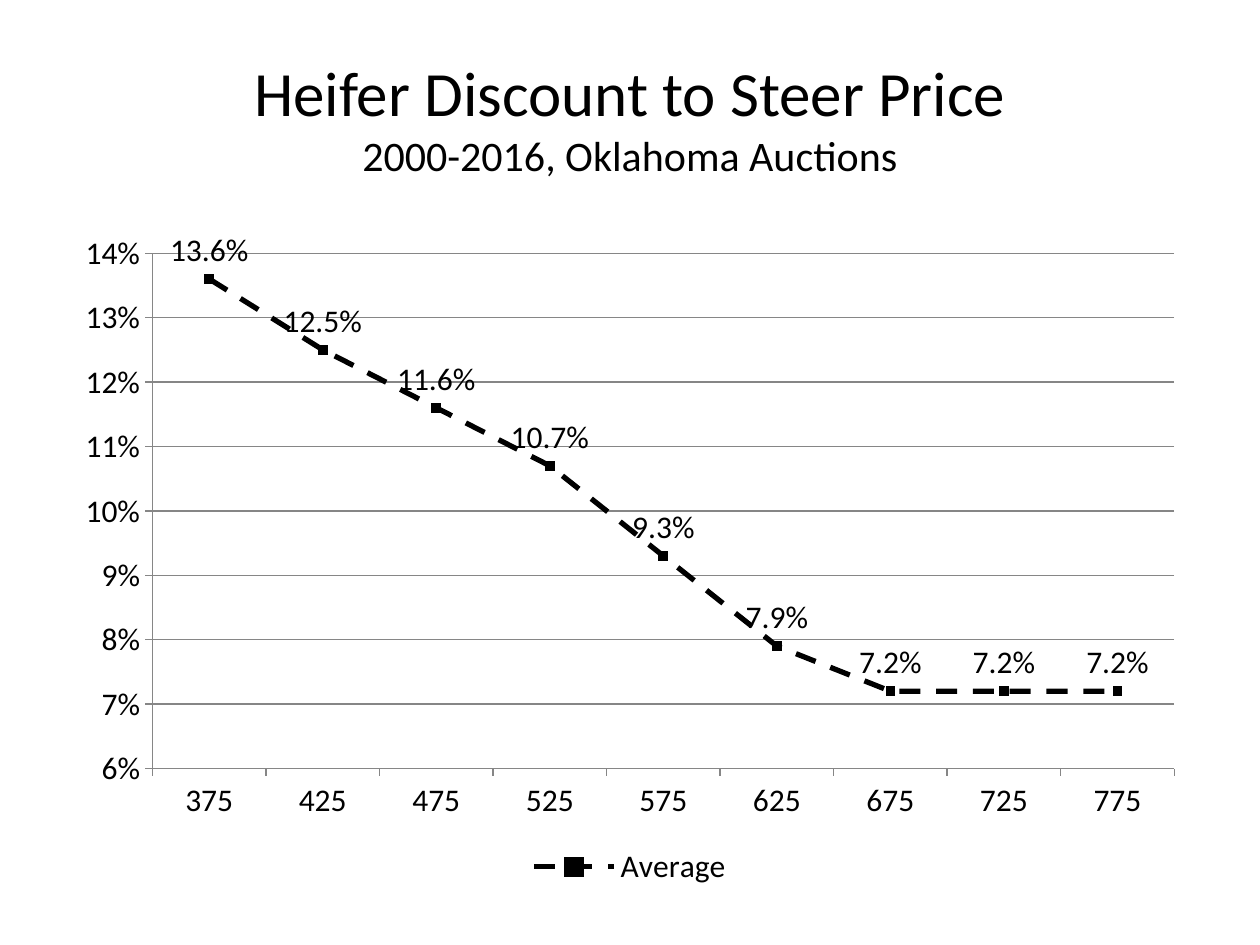
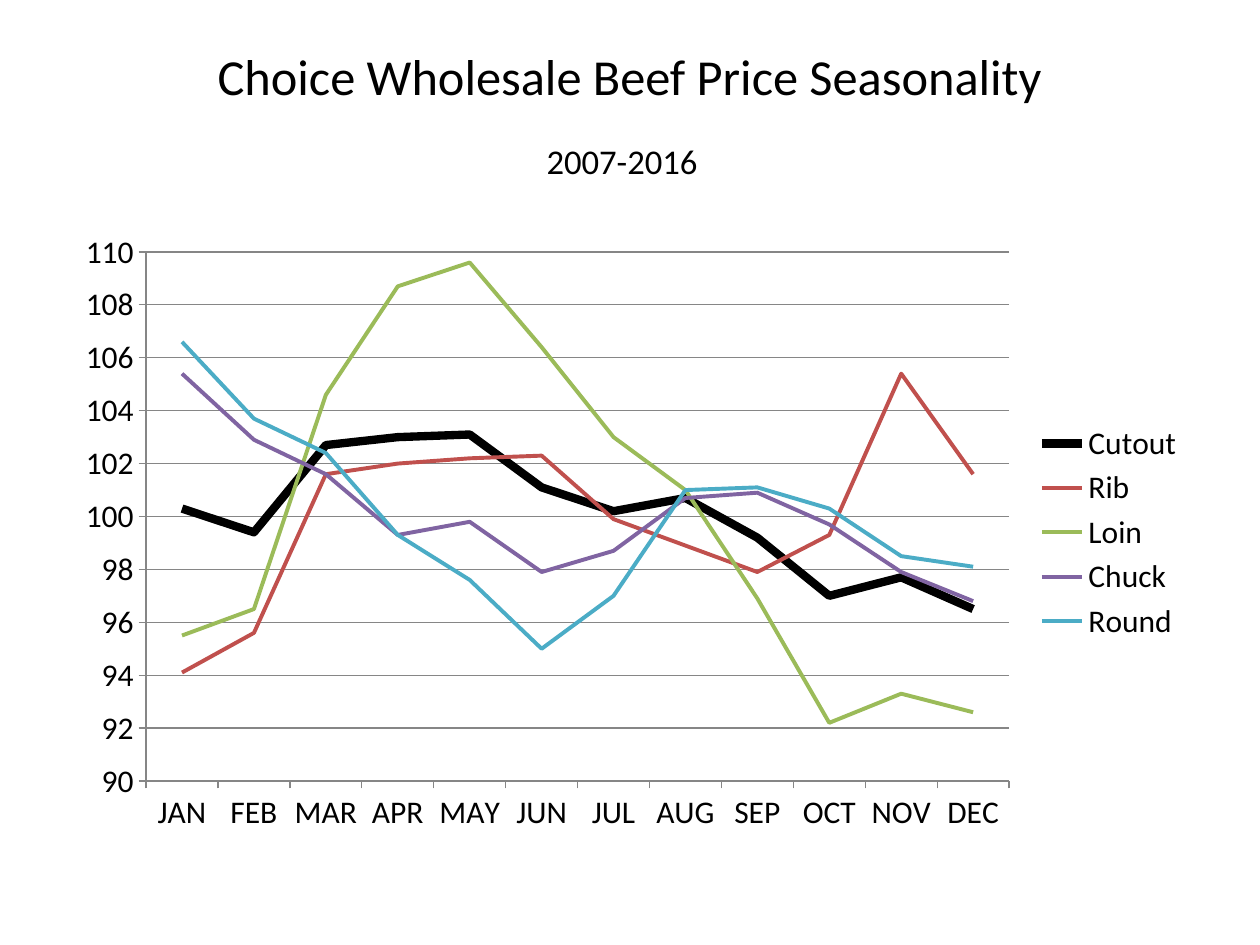
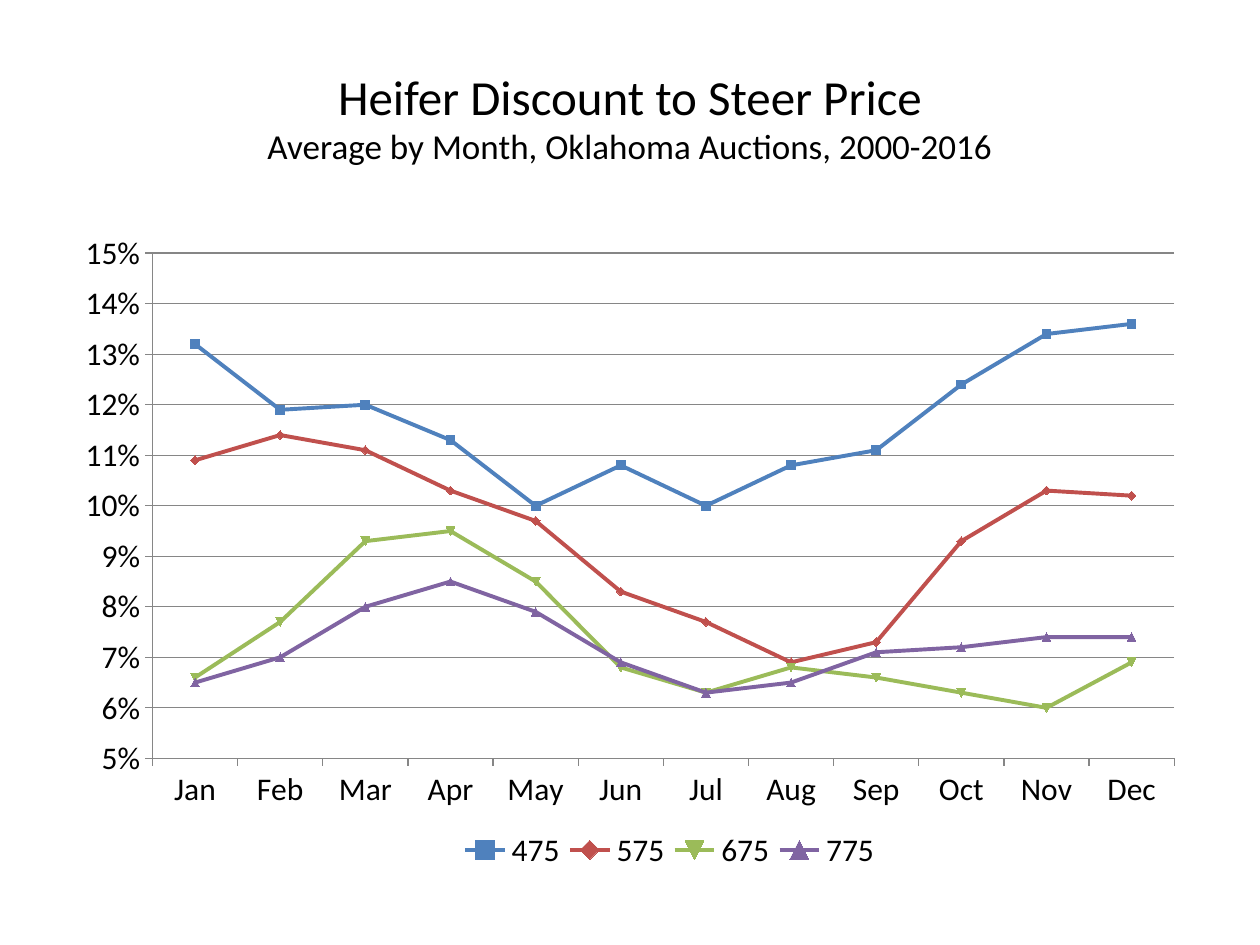
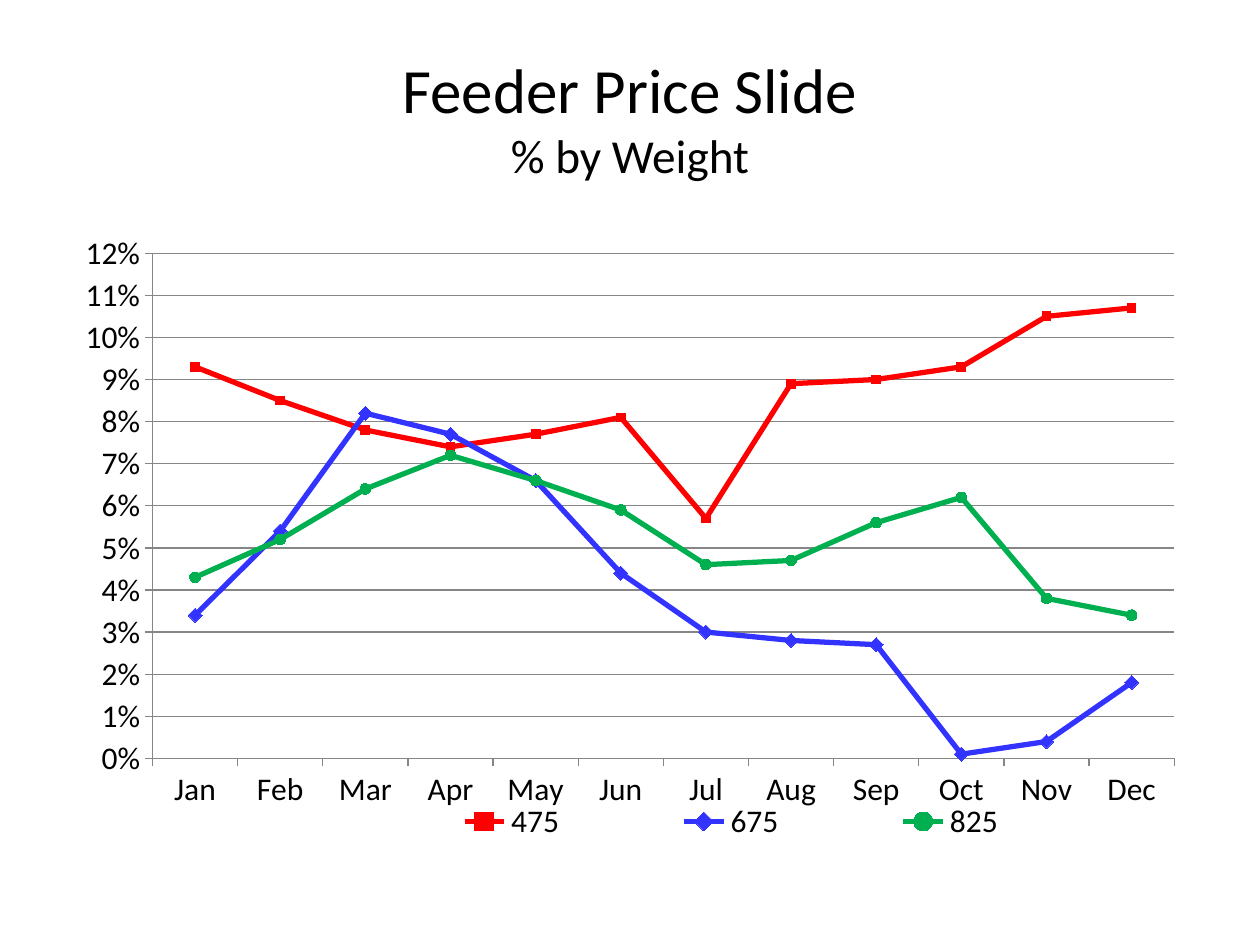
import pptx
import pptx.chart.data
import pptx.dml.color
import pptx.enum.chart
import pptx.enum.dml
import pptx.enum.text
import pptx.oxml
import pptx.oxml.ns
import pptx.util
from pptx.util import Inches

COLORS = {
    "text": "000000", "paper": "FFFFFF", "grid": "868686",
    "blue": "4F81BD", "brick": "C0504D", "olive": "9BBB59",
    "purple": "8064A2", "aqua": "4BACC6",
    "red": "FF0000", "royal": "3333FF", "green": "00B050",
}
FONT = "Calibri"
CHART_LEFT, CHART_TOP, CHART_WIDTH = 0.5, 1.75, 9
MONTHS = ["Jan", "Feb", "Mar", "Apr", "May", "Jun",
          "Jul", "Aug", "Sep", "Oct", "Nov", "Dec"]
MARKERS = pptx.enum.chart.XL_MARKER_STYLE
LEGEND = pptx.enum.chart.XL_LEGEND_POSITION


def rgb(name):
    return pptx.dml.color.RGBColor.from_string(COLORS[name])


class Deck:
    """Holds the shared style and the current slide."""

    def __init__(self):
        self.presentation = pptx.Presentation()
        self.presentation.slide_width = Inches(10)
        self.presentation.slide_height = Inches(7.5)
        self.slide = None

    def add_slide(self, lines):
        """Start a slide; each title line is a list of (text, size) runs."""
        self.slide = self.presentation.slides.add_slide(
            self.presentation.slide_layouts[6])
        box = self.slide.shapes.add_textbox(
            Inches(0.5), Inches(0.3), Inches(9), Inches(1.25))
        frame = box.text_frame
        frame.word_wrap = True
        frame.vertical_anchor = pptx.enum.text.MSO_ANCHOR.MIDDLE
        paragraph = frame.paragraphs[0]
        paragraph.alignment = pptx.enum.text.PP_ALIGN.CENTER
        paragraph.font.name = FONT
        paragraph.font.color.rgb = rgb("text")
        for index, line in enumerate(lines):
            if index:
                paragraph.add_line_break()
            for text, size in line:
                run = paragraph.add_run()
                run.text = text
                run.font.size = pptx.util.Pt(size)

    def add_line_chart(self, height, categories, series, scale, plot_area,
                       markers=True, number_format="0%",
                       legend_position=LEGEND.BOTTOM, legend_area=None):
        """Draw a line chart; scale is (minimum, maximum, step), areas are slide inches."""
        data = pptx.chart.data.CategoryChartData(
            number_format="0.0%" if number_format == "0%" else "General")
        data.categories = categories
        for name, _, values in series:
            data.add_series(name, values)
        kinds = pptx.enum.chart.XL_CHART_TYPE
        chart = self.slide.shapes.add_chart(
            kinds.LINE_MARKERS if markers else kinds.LINE,
            Inches(CHART_LEFT), Inches(CHART_TOP),
            Inches(CHART_WIDTH), Inches(height), data).chart
        chart.has_title = False
        chart.font.name = FONT
        chart.font.size = pptx.util.Pt(18)
        chart.font.color.rgb = rgb("text")
        chart.plots[0].vary_by_categories = False
        for line, (_, color, _) in zip(chart.plots[0].series, series):
            self.style_series(line, color, markers=markers)
        self.style_axes(chart, scale, number_format)

        # Plot area and legend
        area = chart._chartSpace.chart.plotArea
        self.set_layout(area, plot_area, height, inner=True)
        area.append(pptx.oxml.parse_xml(
            f'<c:spPr {pptx.oxml.ns.nsdecls("c", "a")}><a:solidFill>'
            f'<a:srgbClr val="{COLORS["paper"]}"/></a:solidFill></c:spPr>'))
        chart.has_legend = True
        chart.legend.position = legend_position
        chart.legend.include_in_layout = False
        if legend_area:
            self.set_layout(chart.legend._element, legend_area, height)
        return chart

    def style_axes(self, chart, scale, number_format):
        axis = chart.value_axis
        axis.minimum_scale, axis.maximum_scale, axis.major_unit = scale
        axis.has_major_gridlines = True
        axis.tick_labels.number_format = number_format
        axis.tick_labels.number_format_is_linked = False
        for part in (axis, chart.category_axis):
            part.major_tick_mark = pptx.enum.chart.XL_TICK_MARK.OUTSIDE
        for part in (axis, chart.category_axis, axis.major_gridlines):
            part.format.line.color.rgb = rgb("grid")
            part.format.line.width = pptx.util.Pt(0.75)

    def style_series(self, series, color, width=2.25, markers=True,
                     symbol=None, size=None):
        series.smooth = False
        series.format.line.color.rgb = rgb(color)
        series.format.line.width = pptx.util.Pt(width)
        if markers:
            marker = series.marker
            marker.format.fill.solid()
            marker.format.fill.fore_color.rgb = rgb(color)
            marker.format.line.color.rgb = rgb(color)
            if symbol:
                marker.style = symbol
                marker.size = size

    def set_layout(self, element, area, height, inner=False):
        """Place a chart part at an area given in slide inches."""
        left, top, width, depth = area
        shares = {"x": (left - CHART_LEFT) / CHART_WIDTH,
                  "y": (top - CHART_TOP) / height,
                  "w": width / CHART_WIDTH, "h": depth / height}
        parts = '<c:layoutTarget val="inner"/>' if inner else ""
        parts += '<c:xMode val="edge"/><c:yMode val="edge"/>'
        parts += "".join(f'<c:{key} val="{share:.4f}"/>'
                         for key, share in shares.items())
        layout = pptx.oxml.parse_xml(
            f'<c:layout {pptx.oxml.ns.nsdecls("c")}>'
            f'<c:manualLayout>{parts}</c:manualLayout></c:layout>')
        for old in element.findall(pptx.oxml.ns.qn("c:layout")):
            element.remove(old)
        element.insert(0 if inner else 1, layout)


def main():
    deck = Deck()

    # Discount by weight
    deck.add_slide([[("Heifer Discount to Steer Price", 36)],
                    [("2000-2016, Oklahoma Auctions", 24)]])
    chart = deck.add_line_chart(
        5.33, [str(weight) for weight in range(375, 776, 50)],
        [("Average", "text", [0.136, 0.125, 0.116, 0.107, 0.093,
                              0.079, 0.072, 0.072, 0.072])],
        (0.06, 0.14, 0.01), (1.21, 2.01, 8.11, 4.09))
    average = chart.plots[0].series[0]
    deck.style_series(average, "text", 3, symbol=MARKERS.SQUARE, size=5)
    average.format.line.dash_style = pptx.enum.dml.MSO_LINE.DASH
    labels = average.data_labels
    labels.show_value = True
    labels.position = pptx.enum.chart.XL_LABEL_POSITION.ABOVE
    labels.number_format = "0.0%"
    labels.number_format_is_linked = False

    # Wholesale seasonality
    deck.add_slide([[("Choice Wholesale Beef Price Seasonality", 28.8)],
                    [("2007-2016", 19.8), (" ", 39.6)]])
    chart = deck.add_line_chart(
        4.95, [month.upper() for month in MONTHS],
        [("Cutout", "text", [100.3, 99.4, 102.7, 103, 103.1, 101.1,
                             100.2, 100.7, 99.2, 97, 97.7, 96.5]),
         ("Rib", "brick", [94.1, 95.6, 101.6, 102, 102.2, 102.3,
                           99.9, 98.9, 97.9, 99.3, 105.4, 101.6]),
         ("Loin", "olive", [95.5, 96.5, 104.6, 108.7, 109.6, 106.4,
                            103, 101, 96.9, 92.2, 93.3, 92.6]),
         ("Chuck", "purple", [105.4, 102.9, 101.6, 99.3, 99.8, 97.9,
                              98.7, 100.7, 100.9, 99.7, 97.9, 96.8]),
         ("Round", "aqua", [106.6, 103.7, 102.4, 99.3, 97.6, 95,
                            97, 101, 101.1, 100.3, 98.5, 98.1])],
        (90, 110, 2), (1.16, 2, 6.85, 4.2), markers=False,
        number_format="General", legend_position=LEGEND.RIGHT)
    deck.style_series(chart.plots[0].series[0], "text", 4.75, markers=False)

    # Discount by month
    deck.add_slide([[("Heifer Discount to Steer Price", 28)],
                    [("Average by Month, Oklahoma Auctions, 2000-2016", 20)]])
    deck.add_line_chart(
        5.25, MONTHS,
        [("475", "blue", [0.132, 0.119, 0.12, 0.113, 0.1, 0.108,
                          0.1, 0.108, 0.111, 0.124, 0.134, 0.136]),
         ("575", "brick", [0.109, 0.114, 0.111, 0.103, 0.097, 0.083,
                           0.077, 0.069, 0.073, 0.093, 0.103, 0.102]),
         ("675", "olive", [0.066, 0.077, 0.093, 0.095, 0.085, 0.068,
                           0.063, 0.068, 0.066, 0.063, 0.06, 0.069]),
         ("775", "purple", [0.065, 0.07, 0.08, 0.085, 0.079, 0.069,
                            0.063, 0.065, 0.071, 0.072, 0.074, 0.074])],
        (0.05, 0.15, 0.01), (1.21, 2.01, 8.11, 4.01),
        legend_area=(3.61, 6.61, 3.41, 0.32))

    # Feeder price slide
    deck.add_slide([[("Feeder Price Slide", 36)], [("% by Weight", 27)]])
    chart = deck.add_line_chart(
        5.25, MONTHS,
        [("475", "red", [0.093, 0.085, 0.078, 0.074, 0.077, 0.081,
                         0.057, 0.089, 0.09, 0.093, 0.105, 0.107]),
         ("675", "royal", [0.034, 0.054, 0.082, 0.077, 0.066, 0.044,
                           0.03, 0.028, 0.027, 0.001, 0.004, 0.018]),
         ("825", "green", [0.043, 0.052, 0.064, 0.072, 0.066, 0.059,
                           0.046, 0.047, 0.056, 0.062, 0.038, 0.034])],
        (0, 0.12, 0.01), (1.21, 2.01, 8.11, 4.01),
        legend_area=(2.78, 6.36, 6.05, 0.32))
    looks = [("red", MARKERS.SQUARE, 5), ("royal", MARKERS.DIAMOND, 8),
             ("green", MARKERS.CIRCLE, 6)]
    for series, (color, symbol, size) in zip(chart.plots[0].series, looks):
        deck.style_series(series, color, 3, symbol=symbol, size=size)

    deck.presentation.save("out.pptx")


if __name__ == "__main__":
    main()
